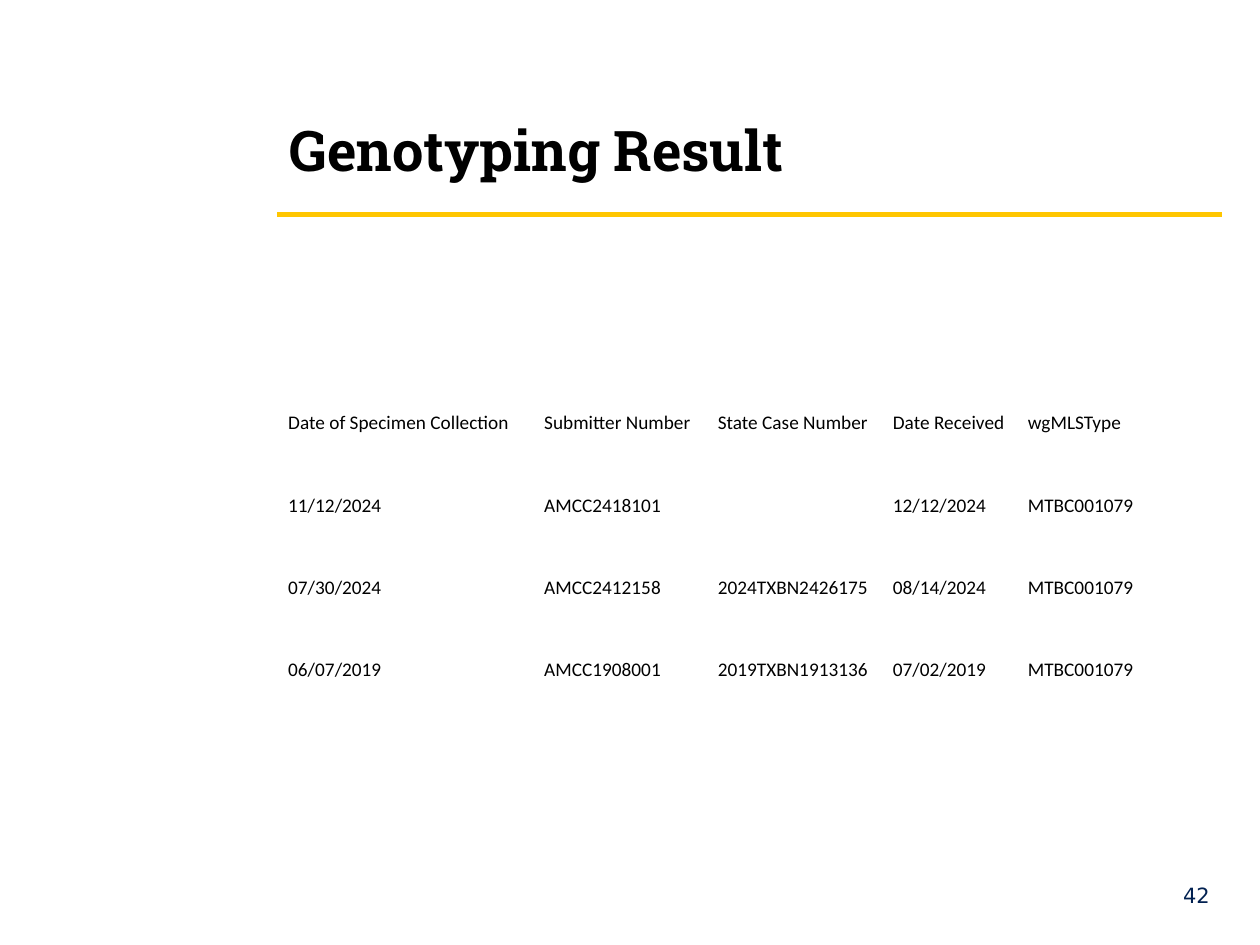
from dataclasses import dataclass

from lxml import etree
from pptx import Presentation
from pptx import util as u
from pptx.dml.color import RGBColor
from pptx.enum import shapes, text
from pptx.oxml import ns


@dataclass(frozen=True)
class Theme:
    ink: str = "000000"
    navy: str = "022151"
    gold: str = "FFC600"
    head: str = "Roboto Slab"
    body: str = "Calibri"
    foot: str = "DejaVu Sans"
    big: int = 32
    mid: int = 12
    small: int = 11
    rule: int = 3


def write(frame, words, *, font, size, color, bold=False,
          align=text.PP_ALIGN.LEFT):
    para = frame.paragraphs[0]
    para.alignment = align
    run = para.add_run()
    run.text = words
    run.font.name = font
    run.font.size = u.Pt(size)
    run.font.bold = bold
    run.font.color.rgb = RGBColor.from_string(color)


class Deck:
    def __init__(self, theme):
        self.theme = theme
        self.file = Presentation()
        self.file.slide_width = u.Cm(25.4)
        self.file.slide_height = u.Cm(19.05)
        self.slide = self.file.slides.add_slide(self.file.slide_layouts[6])

    def label(self, words, box, anchor, **style):
        shape = self.slide.shapes.add_textbox(*map(u.Cm, box))
        frame = shape.text_frame
        frame.word_wrap = True
        frame.vertical_anchor = anchor
        write(frame, words, **style)

    def rule(self, left, right, top):
        line = self.slide.shapes.add_connector(
            shapes.MSO_CONNECTOR.STRAIGHT,
            u.Cm(left), u.Cm(top), u.Cm(right), u.Cm(top))
        line.line.color.rgb = RGBColor.from_string(self.theme.gold)
        line.line.width = u.Pt(self.theme.rule)
        etree.SubElement(line._element.spPr, ns.qn("a:effectLst"))

    def table(self, rows, left, top, widths, height):
        grid = self.slide.shapes.add_table(
            len(rows), len(widths), u.Cm(left), u.Cm(top),
            u.Cm(sum(widths)), u.Cm(height * len(rows))).table
        grid.first_row = grid.horz_banding = False
        for col, width in zip(grid.columns, widths):
            col.width = u.Cm(width)
        for r, row in enumerate(rows):
            grid.rows[r].height = u.Cm(height)
            for c, words in enumerate(row):
                self.cell(grid.cell(r, c), words)

    def cell(self, cell, words):
        cell.fill.background()
        cell.vertical_anchor = text.MSO_ANCHOR.BOTTOM
        cell.margin_left = cell.margin_right = cell.margin_top = u.Cm(0.02)
        cell.margin_bottom = 0
        if words:
            write(cell.text_frame, words, font=self.theme.body,
                  size=self.theme.small, color=self.theme.ink)


def main():
    theme = Theme()
    deck = Deck(theme)
    deck.rule(5.59, 24.64, 4.32)
    deck.label("Genotyping Result", (5.59, 0.76, 19.05, 3.05),
               text.MSO_ANCHOR.BOTTOM, font=theme.head, size=theme.big,
               color=theme.ink, bold=True)
    rows = [
        ("Date of Specimen Collection", "Submitter Number",
         "State Case Number", "Date Received", "wgMLSType"),
        ("11/12/2024", "AMCC2418101", "", "12/12/2024", "MTBC001079"),
        ("07/30/2024", "AMCC2412158", "2024TXBN2426175", "08/14/2024",
         "MTBC001079"),
        ("06/07/2019", "AMCC1908001", "2019TXBN1913136", "07/02/2019",
         "MTBC001079"),
    ]
    deck.table(rows, 5.79, 7.11, (5.16, 3.5, 3.53, 2.72, 3.78), 1.66)
    deck.label("42", (22.1, 17.53, 2.54, 1.02), text.MSO_ANCHOR.MIDDLE,
               font=theme.foot, size=theme.mid, color=theme.navy,
               align=text.PP_ALIGN.RIGHT)
    deck.file.save("out.pptx")


if __name__ == "__main__":
    main()
